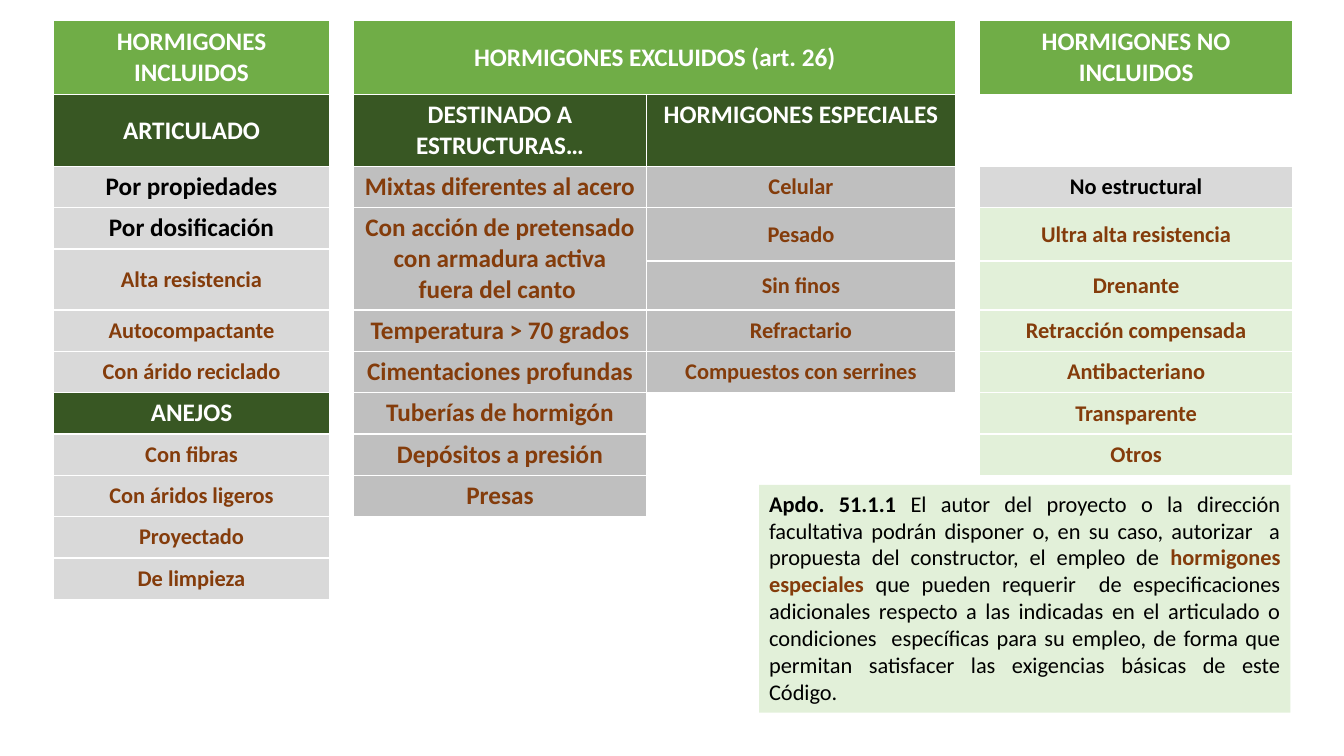
"""Table of concretes included in, excluded from and left out of the code."""
from pptx import Presentation
from pptx.dml.color import RGBColor
from pptx.enum.shapes import MSO_SHAPE
from pptx.enum.text import MSO_ANCHOR, MSO_AUTO_SIZE, PP_ALIGN
from pptx.util import Inches, Pt

WHITE, BLACK, BROWN = "FFFFFF", "000000", "843C0B"
GREEN, DARK, PALE = "70AD47", "385723", "E2F0D9"
LIGHT, GREY = "D9D9D9", "BFBFBF"


def paint(form, tint):
    if hasattr(form, "solid"):
        form.solid()
        form = form.fore_color
    form.rgb = RGBColor.from_string(tint)


def style(font, size, tint, bold):
    font.name, font.size, font.bold = "Calibri", Pt(size), bold
    paint(font.color, tint)


deck = Presentation()
deck.slide_width, deck.slide_height = Inches(13.33), Inches(7.5)
slide = deck.slides.add_slide(deck.slide_layouts[6])

left, top, unit = 0.53, 0.2, 0.41
widths = [2.74, 0.23, 2.9, 3.07, 0.24, 3.1]
heights = [0.74, 0.7, unit, unit, 0.12, 0.47] + [unit] * 9

lists = {
    0: ["HORMIGONES INCLUIDOS", "ARTICULADO", "Por propiedades",
        "Por dosificación", "Alta resistencia", "", "Autocompactante",
        "Con árido reciclado", "ANEJOS", "Con fibras", "Con áridos ligeros",
        "Proyectado", "De limpieza"],
    2: ["HORMIGONES EXCLUIDOS (art. 26)", "DESTINADO A ESTRUCTURAS…",
        "Mixtas diferentes al acero",
        "Con acción de pretensado con armadura activa fuera del canto ",
        "", "", "Temperatura > 70 grados", "Cimentaciones profundas",
        "Tuberías de hormigón", "Depósitos a presión", "Presas"],
    3: ["", "HORMIGONES ESPECIALES", "Celular", "Pesado", "", "Sin finos",
        "Refractario", "Compuestos con serrines"],
    5: ["HORMIGONES NO INCLUIDOS", "", "No estructural",
        "Ultra alta resistencia", "", "Drenante", "Retracción compensada",
        "Antibacteriano", "Transparente", "Otros"],
}
fills = {0: LIGHT, 2: GREY, 3: GREY, 5: PALE}
plain = ["Por propiedades", "Por dosificación", "No estructural"]
high = ["DESTINADO A ESTRUCTURAS…", "HORMIGONES ESPECIALES", "Por dosificación"]
spans = [(0, 2, 0, 3), (3, 2, 5, 2), (3, 3, 4, 3), (3, 4, 4, 4),
         (3, 5, 4, 5), (4, 0, 5, 0), (4, 1, 5, 1)]

frame = slide.shapes.add_table(
    len(heights), len(widths), Inches(left), Inches(top),
    Inches(sum(widths)), Inches(sum(heights)))
table = frame.table
table.horz_banding = False
for col, width in zip(table.columns, widths):
    col.width = Inches(width)
for row, height in zip(table.rows, heights):
    row.height = Inches(height)
for r1, c1, r2, c2 in spans:
    table.cell(r1, c1).merge(table.cell(r2, c2))

for r in range(len(heights)):
    for c in range(len(widths)):
        cell = table.cell(r, c)
        words = lists.get(c, [])
        text = words[r] if r < len(words) else ""
        if not text:
            paint(cell.fill, WHITE)
            continue
        head = r == 0 or text.isupper()
        if head:
            fill, ink = (DARK if r else GREEN), WHITE
        elif text in plain:
            fill, ink = LIGHT, BLACK
        else:
            fill, ink = fills[c], BROWN
        big = head or c == 2 or (c == 0 and text in plain)
        paint(cell.fill, fill)
        cell.text = text
        cell.vertical_anchor = MSO_ANCHOR.TOP if text in high else MSO_ANCHOR.MIDDLE
        para = cell.text_frame.paragraphs[0]
        para.alignment = PP_ALIGN.CENTER
        style(para.font, 18 if big else 16, ink, True)

note = slide.shapes.add_shape(
    MSO_SHAPE.RECTANGLE, Inches(7.53), Inches(4.81), Inches(5.27), Inches(2.26))
note.shadow.inherit = False
paint(note.fill, PALE)
note.line.fill.background()
body = note.text_frame
body.word_wrap = True
body.auto_size = MSO_AUTO_SIZE.SHAPE_TO_FIT_TEXT
body.vertical_anchor = MSO_ANCHOR.TOP
para = body.paragraphs[0]
para.alignment = PP_ALIGN.JUSTIFY
for text, ink, bold in [
    ("Apdo. 51.1.1 ", BLACK, True),
    ("El autor del proyecto o la dirección facultativa podrán disponer o, "
     "en su caso, autorizar  a propuesta del constructor, el empleo de ",
     BLACK, False),
    ("hormigones especiales ", BROWN, True),
    ("que pueden requerir  de especificaciones adicionales respecto a las "
     "indicadas en el articulado o condiciones  específicas para su empleo, "
     "de forma que permitan satisfacer las exigencias básicas de este Código.",
     BLACK, False),
]:
    run = para.add_run()
    run.text = text
    style(run.font, 16, ink, bold)

deck.save("out.pptx")
